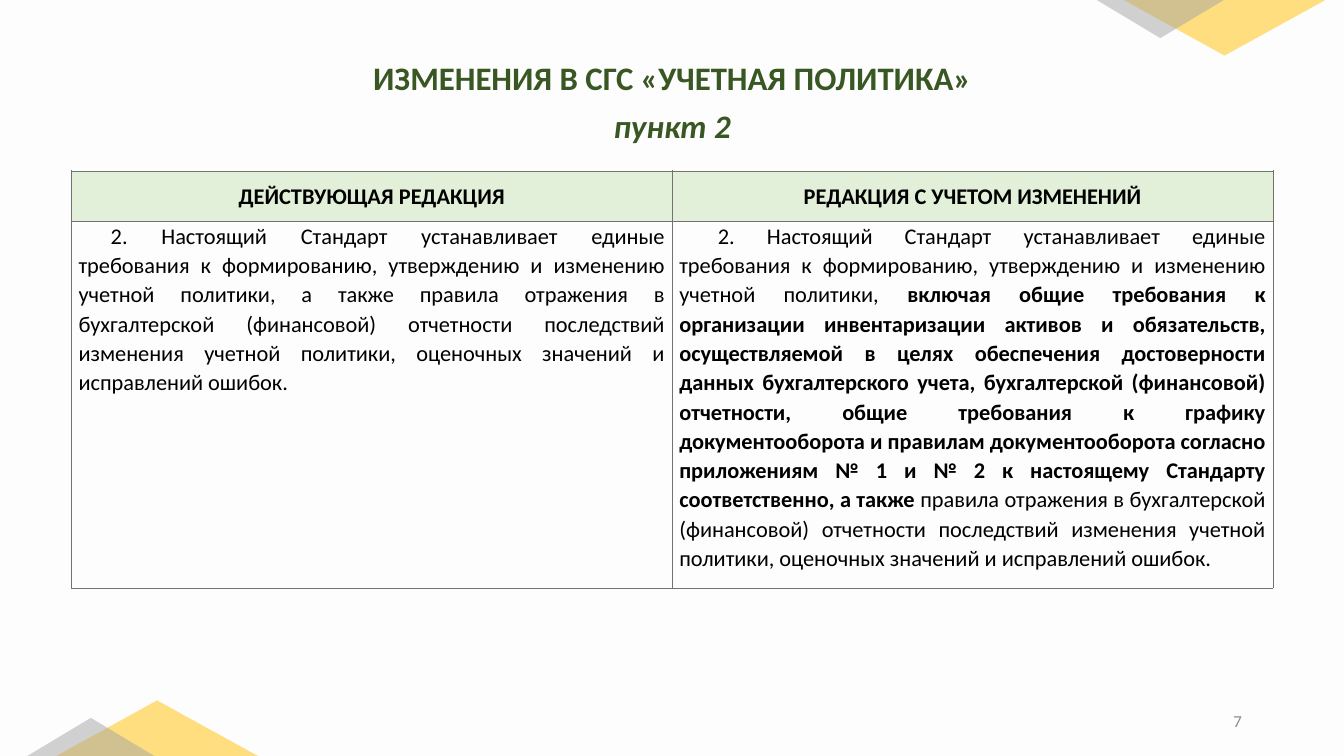
from lxml import etree
from pptx import Presentation
from pptx.dml.color import RGBColor
from pptx.enum.shapes import MSO_SHAPE as SHAPE
from pptx.enum.text import MSO_ANCHOR as ANCHOR, PP_ALIGN as ALIGN
from pptx.oxml.ns import qn
from pptx.util import Cm, Pt

WIDTH, HEIGHT = 33.87, 19.05
LEFT, CONTENT_W = 1.8, 30.28
GREEN, PALE_GREEN, BLACK = "385723", "E2F0D9", "000000"
YELLOW, GRAY, BORDER, NUMBER = "FFC000", "A5A5A5", "767171", "8C8C8C"

INTRO = "2. Настоящий Стандарт устанавливает единые требования к формированию, утверждению и изменению учетной политики, "
RULES = ("правила отражения в бухгалтерской (финансовой) отчетности последствий изменения "
         "учетной политики, оценочных значений и исправлений ошибок.")
ADDED = ("включая общие требования к организации инвентаризации активов и обязательств, "
         "осуществляемой в целях обеспечения достоверности данных бухгалтерского учета, "
         "бухгалтерской (финансовой) отчетности, общие требования к графику документооборота "
         "и правилам документооборота согласно приложениям № 1 и № 2 к настоящему Стандарту "
         "соответственно, а также")

HEADERS = ["ДЕЙСТВУЮЩАЯ РЕДАКЦИЯ", "РЕДАКЦИЯ С УЧЕТОМ ИЗМЕНЕНИЙ"]
VERSIONS = [
    (0.81, [(INTRO + "а также " + RULES, False)]),
    (0.97, [(INTRO, False), (ADDED, True), (" " + RULES, False)]),
]


def rgb(color):
    return RGBColor.from_string(color)


class SlideBuilder:
    font = "Calibri"

    def __init__(self, prs):
        self.s = prs.slides.add_slide(prs.slide_layouts[6])
        fill = self.s.background.fill
        fill.solid()
        fill.fore_color.rgb = rgb("FDFDFD")

    def paragraph(self, p, parts, size, color, align, spacing, italic=None):
        p.alignment = align
        p.line_spacing = spacing
        for text, bold in parts:
            r = p.add_run()
            r.text = text
            r.font.name = self.font
            r.font.size = Pt(size)
            r.font.bold = bold
            r.font.italic = italic
            r.font.color.rgb = rgb(color)

    def text(self, x, y, w, h, text, size, color, align, spacing=1.0, bold=True, italic=None):
        tf = self.s.shapes.add_textbox(Cm(x), Cm(y), Cm(w), Cm(h)).text_frame
        tf.word_wrap = True
        tf.vertical_anchor = ANCHOR.MIDDLE
        self.paragraph(tf.paragraphs[0], [(text, bold)], size, color, align, spacing, italic)

    def triangle(self, x, y, w, h, color, rotation):
        sp = self.s.shapes.add_shape(SHAPE.ISOSCELES_TRIANGLE, Cm(x), Cm(y), Cm(w), Cm(h))
        sp.rotation = rotation
        sp.shadow.inherit = False
        sp.line.fill.background()
        sp.fill.solid()
        sp.fill.fore_color.rgb = rgb(color)
        color_xml = sp.fill._xPr.find(".//" + qn("a:srgbClr"))
        etree.SubElement(color_xml, qn("a:alpha"), val="50000")

    def table(self, x, y, col_widths, row_heights):
        frame = self.s.shapes.add_table(len(row_heights), len(col_widths), Cm(x), Cm(y),
                                        Cm(sum(col_widths)), Cm(sum(row_heights)))
        table = frame.table
        table.first_row = table.horz_banding = False
        for col, width in zip(table.columns, col_widths):
            col.width = Cm(width)
        for row, height in zip(table.rows, row_heights):
            row.height = Cm(height)
        return table

    def cell(self, cell, parts, align, anchor=ANCHOR.TOP, fill=None, indent=0):
        cell.margin_left = cell.margin_right = Cm(0.18)
        cell.margin_top = cell.margin_bottom = Cm(0)
        cell.vertical_anchor = anchor
        if fill:
            cell.fill.solid()
            cell.fill.fore_color.rgb = rgb(fill)
        else:
            cell.fill.background()
        self.borders(cell)
        p = cell.text_frame.paragraphs[0]
        self.paragraph(p, parts, 16, BLACK, align, 1.07)
        if indent:
            p._p.get_or_add_pPr().set("indent", str(Cm(indent)))

    def borders(self, cell):
        tc_pr = cell._tc.get_or_add_tcPr()
        for i, side in enumerate(["lnL", "lnR", "lnT", "lnB"]):
            ln = etree.Element(qn("a:" + side), w=str(Pt(0.25)))
            fill = etree.SubElement(ln, qn("a:solidFill"))
            etree.SubElement(fill, qn("a:srgbClr"), val=BORDER)
            tc_pr.insert(i, ln)


def main():
    prs = Presentation()
    prs.slide_width, prs.slide_height = Cm(WIDTH), Cm(HEIGHT)
    b = SlideBuilder(prs)

    b.text(23.93, 17.65, 7.62, 1.02, "7", 12, NUMBER, ALIGN.RIGHT, bold=False)
    b.text(LEFT, 1.32, CONTENT_W, 1.4, "ИЗМЕНЕНИЯ В СГС «УЧЕТНАЯ ПОЛИТИКА»", 23.4, GREEN, ALIGN.CENTER, 0.9)
    b.text(LEFT, 2.72, CONTENT_W, 1.07, "пункт 2", 23.4, GREEN, ALIGN.CENTER, 0.8, italic=True)

    table = b.table(LEFT, 4.3, [CONTENT_W / 2] * 2, [1.27, 9.25])
    for col, (header, (indent, parts)) in enumerate(zip(HEADERS, VERSIONS)):
        b.cell(table.cell(0, col), [(header, True)], ALIGN.CENTER, ANCHOR.MIDDLE, PALE_GREEN)
        b.cell(table.cell(1, col), parts, ALIGN.JUSTIFY, indent=indent)

    for yellow_x, gray_x, at_top in [(1.42, 0.69, False), (28.32, 27.64, True)]:
        for x, w, h, color in [(yellow_x, 5.08, 1.4, YELLOW), (gray_x, 3.2, 0.96, GRAY)]:
            b.triangle(x, 0 if at_top else HEIGHT - h, w, h, color, 180 if at_top else 0)

    prs.save("out.pptx")


if __name__ == "__main__":
    main()
